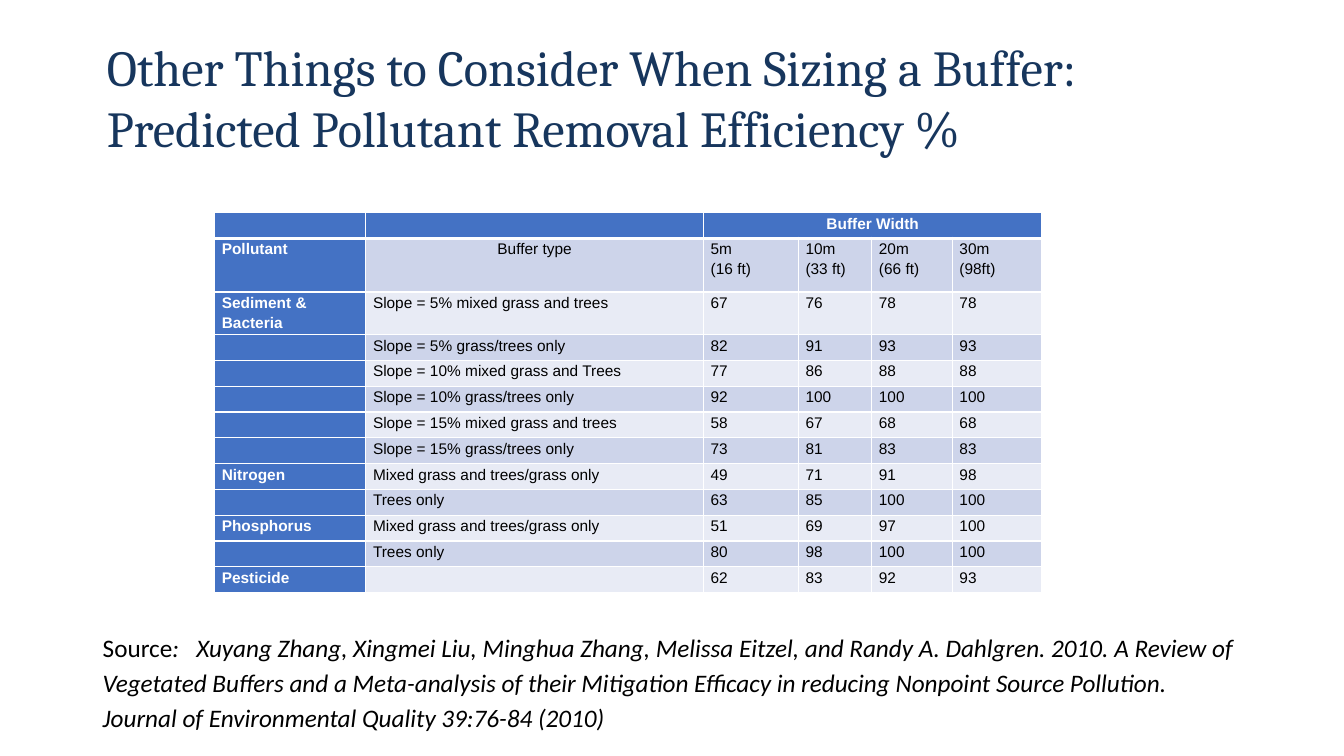
from dataclasses import dataclass

from lxml import etree
from pptx import Presentation
from pptx.dml.color import RGBColor
from pptx.enum.text import MSO_ANCHOR, MSO_AUTO_SIZE, PP_ALIGN
from pptx.oxml.ns import qn
from pptx.util import Cm, Pt

LEFT, CENTER = PP_ALIGN.LEFT, PP_ALIGN.CENTER
TOP = MSO_ANCHOR.TOP
GROW = MSO_AUTO_SIZE.SHAPE_TO_FIT_TEXT
TITLE_ONLY = 5


@dataclass(frozen=True)
class Theme:
    navy: RGBColor = RGBColor(0x17, 0x36, 0x5D)
    blue: RGBColor = RGBColor(0x44, 0x72, 0xC4)
    dark: RGBColor = RGBColor(0xCD, 0xD4, 0xEA)
    light: RGBColor = RGBColor(0xE8, 0xEB, 0xF5)
    white: RGBColor = RGBColor(0xFF, 0xFF, 0xFF)
    black: RGBColor = RGBColor(0, 0, 0)
    title: Pt = Pt(36)
    source: Pt = Pt(18)
    cell: Pt = Pt(11)


THEME = Theme()
TITLE = ("Other Things to Consider When Sizing a Buffer: "
         "Predicted Pollutant Removal Efficiency %")
CITE = ("Xuyang Zhang, Xingmei Liu, Minghua Zhang, Melissa Eitzel, and "
        "Randy A. Dahlgren. 2010. A Review of Vegetated Buffers and a "
        "Meta-analysis of their Mitigation Efficacy in reducing Nonpoint "
        "Source Pollution. Journal of Environmental Quality 39:76-84 (2010)")
WIDTHS = (3.81, 8.51, 2.39, 1.85, 2.03, 2.26)
ROW, TALL = 0.65, 1.35
ROWS = (
    ("", "", "Buffer Width", "", "", ""),
    ("Pollutant", "Buffer type", "5m\n(16 ft)", "10m\n(33 ft)",
     "20m\n(66 ft)", "30m\n(98ft)"),
    ("Sediment & Bacteria", "Slope = 5% mixed grass and trees", 67, 76, 78, 78),
    ("", "Slope = 5% grass/trees only", 82, 91, 93, 93),
    ("", "Slope = 10% mixed grass and Trees", 77, 86, 88, 88),
    ("", "Slope = 10% grass/trees only", 92, 100, 100, 100),
    ("", "Slope = 15% mixed grass and trees", 58, 67, 68, 68),
    ("", "Slope = 15% grass/trees only", 73, 81, 83, 83),
    ("Nitrogen", "Mixed grass and trees/grass only", 49, 71, 91, 98),
    ("", "Trees only", 63, 85, 100, 100),
    ("Phosphorus", "Mixed grass and trees/grass only", 51, 69, 97, 100),
    ("", "Trees only", 80, 98, 100, 100),
    ("Pesticide", "", 62, 83, 92, 93),
)


def add_run(para, text, font, size, color, bold=False, italic=False):
    run = para.add_run()
    run.text = text
    run.font.name, run.font.size = font, size
    run.font.bold, run.font.italic = bold, italic
    run.font.color.rgb = color


def place(shape, left, top, width, height):
    shape.left, shape.top = Cm(left), Cm(top)
    shape.width, shape.height = Cm(width), Cm(height)


def set_edge(cell, side, width):
    line = etree.SubElement(cell._tc.get_or_add_tcPr(), qn(f"a:ln{side}"),
                            w=str(Pt(width)))
    fill = etree.SubElement(line, qn("a:solidFill"))
    etree.SubElement(fill, qn("a:srgbClr"), val=str(THEME.white))


def fill_cell(cell, text, row, col):
    """Style one cell by its place: blue header row and column, banded body."""
    head = row == 0 or col == 0
    thick = {0: "B", 1: "T"}.get(row)
    for side in "LRTB":
        set_edge(cell, side, 3 if side == thick else 1)
    cell.fill.solid()
    cell.fill.fore_color.rgb = (
        THEME.blue if head else THEME.dark if row % 2 else THEME.light)
    cell.margin_left = cell.margin_right = Cm(0.18)
    cell.margin_top = cell.margin_bottom = 0
    frame = cell.text_frame
    for i, line in enumerate(str(text).split("\n")):
        para = frame.add_paragraph() if i else frame.paragraphs[0]
        para.line_spacing = 1.15
        para.alignment = CENTER if row == 0 or (row, col) == (1, 1) else LEFT
        if line:
            add_run(para, line, "Arial", THEME.cell,
                    THEME.white if head else THEME.black, bold=head)
        else:
            # Keeps a blank cell from stretching its row
            end = para._p.get_or_add_endParaRPr()
            end.set("sz", str(int(THEME.cell.pt * 100)))


def add_title(slide):
    title = slide.shapes.title
    place(title, 2.44, 0.79, 29.01, 3.33)
    frame = title.text_frame
    frame.auto_size, frame.vertical_anchor = GROW, TOP
    para = frame.paragraphs[0]
    para.alignment = LEFT
    add_run(para, TITLE, "Cambria", THEME.title, THEME.navy)


def add_rates(slide):
    """Add the table of removal rates by pollutant and buffer width."""
    table = slide.shapes.add_table(
        len(ROWS), len(WIDTHS), Cm(5.41), Cm(5.36), Cm(sum(WIDTHS)),
        Cm(ROW * (len(ROWS) - 1) + TALL)).table
    for col, width in zip(table.columns, WIDTHS):
        col.width = Cm(width)
    for r, texts in enumerate(ROWS):
        table.rows[r].height = Cm(TALL if r == 1 else ROW)
        for c, text in enumerate(texts):
            fill_cell(table.cell(r, c), text, r, c)
    table.cell(0, 2).merge(table.cell(0, 5))


def add_source(slide):
    box = slide.shapes.add_textbox(Cm(2.34), Cm(15.7), Cm(29.21), Cm(2.87))
    frame = box.text_frame
    frame.word_wrap, frame.auto_size = True, GROW
    para = frame.paragraphs[0]
    para.line_spacing = 1.15
    tabs = etree.SubElement(para._p.get_or_add_pPr(), qn("a:tabLst"))
    etree.SubElement(tabs, qn("a:tab"), pos=str(Cm(2.36)), algn="l")
    add_run(para, "Source", "Calibri", THEME.source, THEME.black)
    add_run(para, f":\t{CITE}", "Calibri", THEME.source, THEME.black,
            italic=True)


def main():
    deck = Presentation()
    deck.slide_width, deck.slide_height = Cm(33.87), Cm(19.05)
    slide = deck.slides.add_slide(deck.slide_layouts[TITLE_ONLY])
    add_rates(slide)
    add_source(slide)
    add_title(slide)
    deck.save("out.pptx")


if __name__ == "__main__":
    main()
